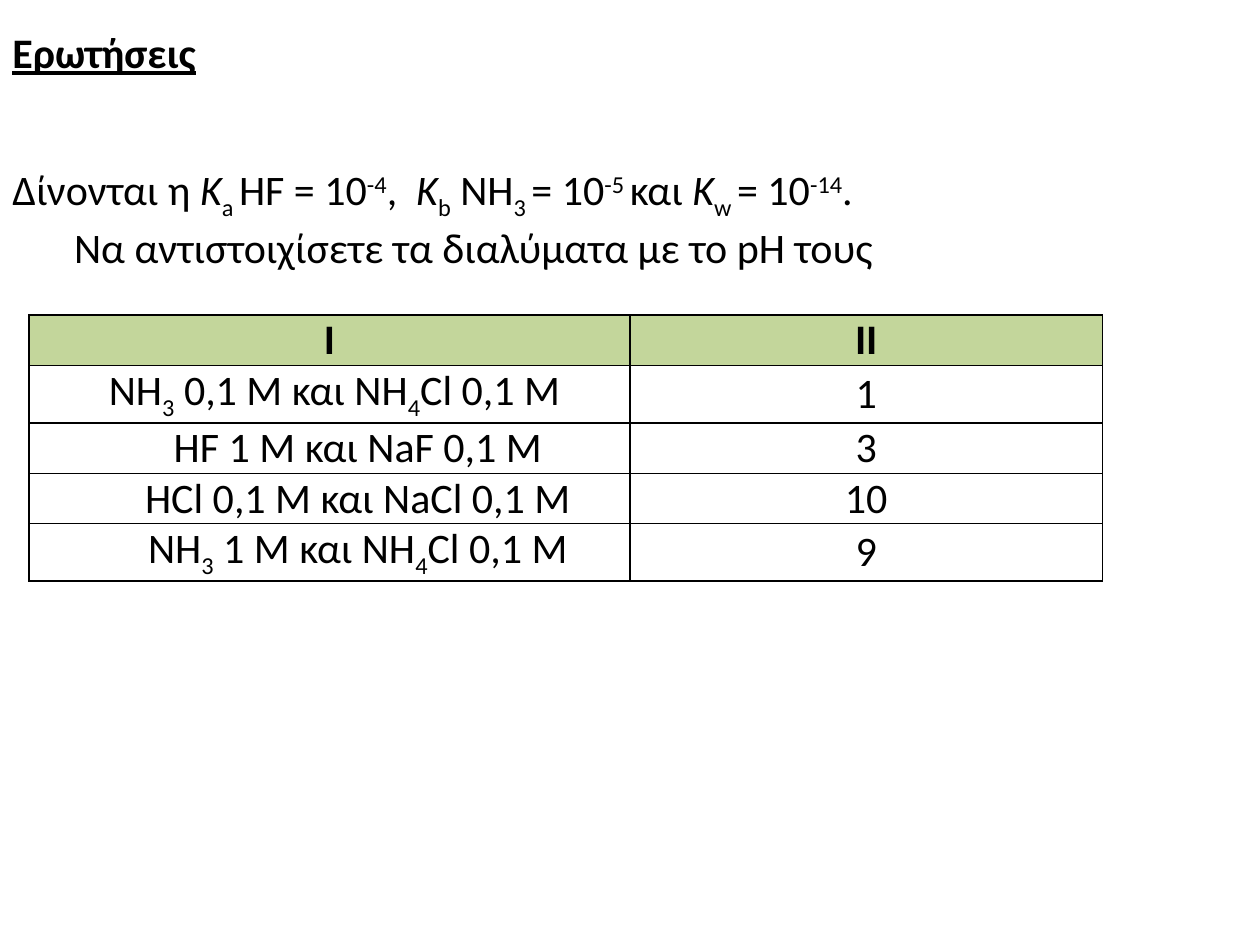
from lxml.etree import SubElement
from pptx import Presentation
from pptx.dml.color import RGBColor
from pptx.enum.text import MSO_ANCHOR, MSO_AUTO_SIZE, PP_ALIGN
from pptx.oxml.ns import qn
from pptx.util import Inches, Pt

BLACK = RGBColor(0x00, 0x00, 0x00)
GREEN = RGBColor(0xC3, 0xD6, 0x9B)
FONT_NAME = "Calibri"
FONT_SIZE = Pt(24)
BASELINES = {"sub": "-25000", "super": "30000"}

TITLE = [("Ερωτήσεις", "title")]
GIVEN = [
    ("Δίνονται η ", ""), ("K", "italic"), ("a ", "sub"), ("HF = 10", ""), ("-4", "super"),
    (",  ", ""), ("K", "italic"), ("b", "sub"), (" NH", ""), ("3 ", "sub"),
    ("= 10", ""), ("-5 ", "super"), ("και ", ""), ("K", "italic"), ("w ", "sub"),
    ("= 10", ""), ("-14", "super"), (".", ""),
]
TASK = [("Να αντιστοιχίσετε τα διαλύματα με το pH τους", "")]

COLUMN_WIDTHS = [4.77, 3.75]
ROW_HEIGHT = 0.4
HEADERS = ["Ι", "ΙΙ"]
SOLUTIONS = [
    ([("NH", ""), ("3", "sub"), (" 0,1 M και NH", ""), ("4", "sub"), ("Cl 0,1 M", "")], 0.08, "1"),
    ([("HF 1 M και NaF 0,1 M", "")], 0.45, "3"),
    ([("HCl 0,1 M και NaCl 0,1 M", "")], 0.45, "10"),
    ([("NH", ""), ("3", "sub"), (" 1 M και NH", ""), ("4", "sub"), ("Cl 0,1 M", "")], 0.45, "9"),
]


def write_runs(paragraph, pieces):
    for text, style in pieces:
        run = paragraph.add_run()
        run.text = text
        font = run.font
        font.name, font.size = FONT_NAME, FONT_SIZE
        font.color.rgb = BLACK
        font.bold = style in ("title", "bold")
        font.underline = style == "title"
        font.italic = style == "italic"
        if style in BASELINES:
            run._r.get_or_add_rPr().set("baseline", BASELINES[style])


def add_text(slide, top, height, lines):
    box = slide.shapes.add_textbox(Inches(0), Inches(top), Inches(10), Inches(height))
    frame = box.text_frame
    frame.word_wrap = True
    frame.auto_size = MSO_AUTO_SIZE.SHAPE_TO_FIT_TEXT
    for index, (pieces, left, first_line) in enumerate(lines):
        paragraph = frame.add_paragraph() if index else frame.paragraphs[0]
        properties = paragraph._p.get_or_add_pPr()
        properties.set("marL", str(Inches(left)))
        properties.set("indent", str(Inches(first_line)))
        write_runs(paragraph, pieces)


def fill_cell(cell, pieces, indent=0, color=None):
    properties = cell._tc.get_or_add_tcPr()
    for side in ("a:lnL", "a:lnR", "a:lnT", "a:lnB"):
        border = SubElement(properties, qn(side), w=str(Pt(1)))
        solid = SubElement(border, qn("a:solidFill"))
        SubElement(solid, qn("a:srgbClr"), val=str(BLACK))
    if color is None:
        cell.fill.background()
    else:
        cell.fill.solid()
        cell.fill.fore_color.rgb = color
    cell.vertical_anchor = MSO_ANCHOR.MIDDLE
    cell.margin_left = Inches(0.07 + indent)
    cell.margin_right = Inches(0.07)
    cell.margin_top = cell.margin_bottom = 0
    paragraph = cell.text_frame.paragraphs[0]
    paragraph.alignment = PP_ALIGN.CENTER
    paragraph.space_before = Pt(6)
    write_runs(paragraph, pieces)


def add_matching_table(slide):
    row_count = len(SOLUTIONS) + 1
    table = slide.shapes.add_table(
        row_count, len(HEADERS), Inches(0.23), Inches(2.5),
        Inches(sum(COLUMN_WIDTHS)), Inches(ROW_HEIGHT * row_count),
    ).table
    for column, width in zip(table.columns, COLUMN_WIDTHS):
        column.width = Inches(width)
    for index, header in enumerate(HEADERS):
        fill_cell(table.cell(0, index), [(header, "bold")], color=GREEN)
    for row, (solution, indent, acidity) in enumerate(SOLUTIONS, 1):
        fill_cell(table.cell(row, 0), solution, indent)
        fill_cell(table.cell(row, 1), [(acidity, "")])


def main():
    presentation = Presentation()
    presentation.slide_width = Inches(10)
    presentation.slide_height = Inches(7.5)
    slide = presentation.slides.add_slide(presentation.slide_layouts[6])
    add_text(slide, 1.25, 0.91, [(GIVEN, 0.49, -0.49), (TASK, 0.49, 0)])
    add_matching_table(slide)
    add_text(slide, 0.16, 0.5, [(TITLE, 0, 0)])
    presentation.save("out.pptx")


if __name__ == "__main__":
    main()
